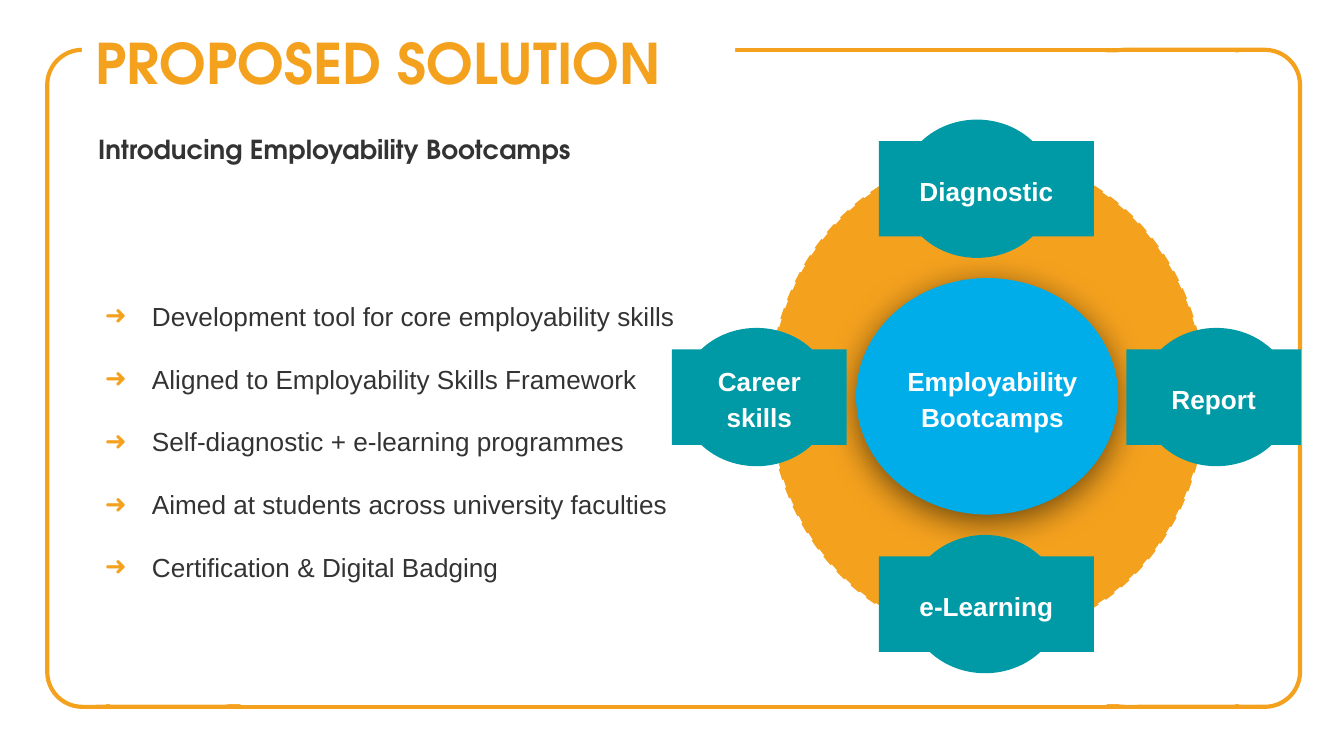
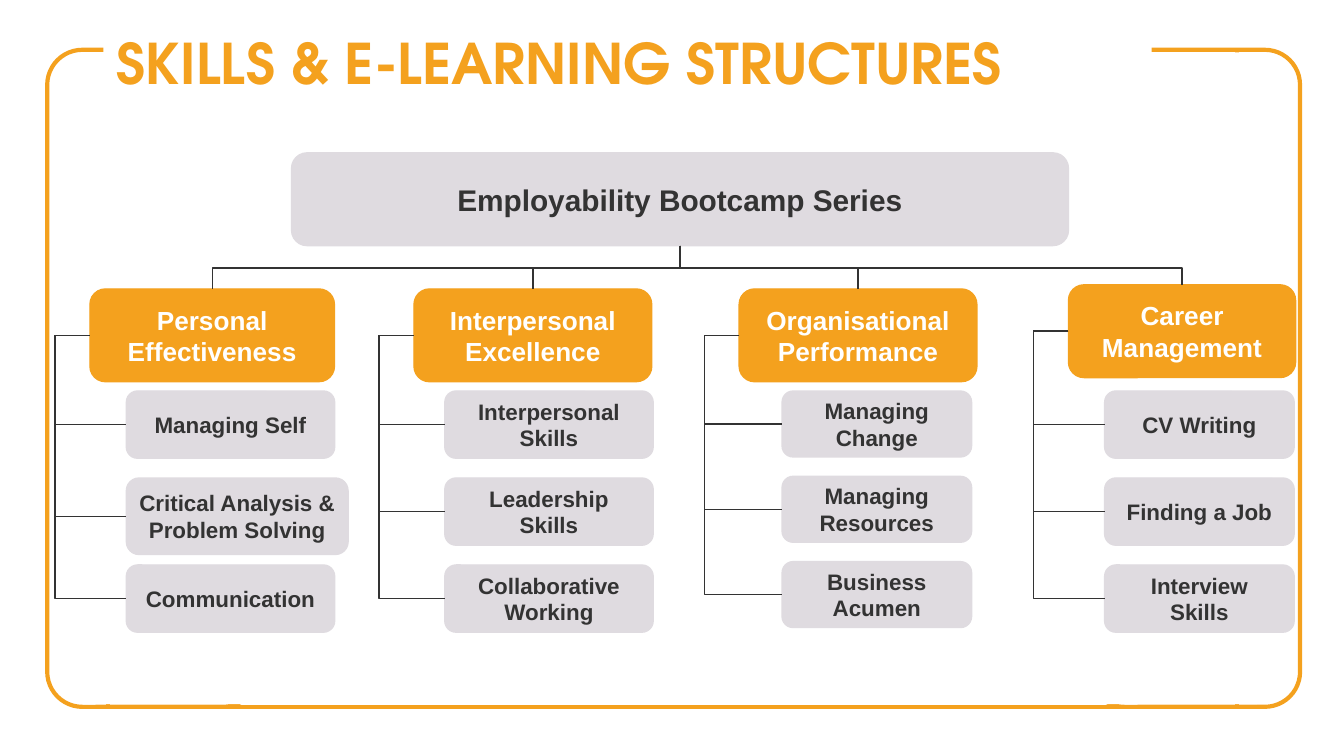
from lxml import etree
from pptx import Presentation
from pptx import util as u
from pptx.dml.color import RGBColor
from pptx.enum import dml, shapes, text
from pptx.oxml import ns

ORANGE, TEAL, BLUE = "F4A11E", "009AA6", "00ADE9"
GREY, INK, WHITE = "DFDBE0", "333333", "FFFFFF"
HEADING_FONT, TEXT_FONT = "TeX Gyre Adventor", "Arial"
SHAPE = shapes.MSO_SHAPE
CENTER = {"alignment": text.PP_ALIGN.CENTER}
LEFT = {"alignment": text.PP_ALIGN.LEFT, "space_before": u.Pt(0)}
MIDDLE, TOP = text.MSO_ANCHOR.MIDDLE, text.MSO_ANCHOR.TOP
INSET = 7.2
SPINE_GAP = 18.7
BAR_DROP = 12


def color(value):
    return RGBColor.from_string(value)


def points(box):
    return [u.Pt(round(value, 2)) for value in box]


def apply(target, values):
    for name, value in values.items():
        setattr(target, name, value)


def add_xml(parent, tag, **attributes):
    child = etree.SubElement(parent, ns.qn(tag))
    for name, value in attributes.items():
        child.set(name, str(value))
    return child


def add_block(page, kind, box, fill=None, line=None, weight=0.75):
    shape = page.shapes.add_shape(kind, *points(box))
    shape.shadow.inherit = False
    if fill:
        shape.fill.solid()
        shape.fill.fore_color.rgb = color(fill)
    else:
        shape.fill.background()
    if line:
        shape.line.color.rgb = color(line)
        shape.line.width = u.Pt(weight)
    else:
        shape.line.fill.background()
    return shape


def write(shape, lines, size, ink, bold=True, font=TEXT_FONT, anchor=MIDDLE, layout=CENTER, inset=INSET):
    frame = shape.text_frame
    margins = ("margin_left", "margin_top", "margin_right", "margin_bottom")
    apply(frame, {
        "word_wrap": True, "auto_size": text.MSO_AUTO_SIZE.NONE, "vertical_anchor": anchor,
        **dict.fromkeys(margins, u.Pt(inset)),
    })
    for number, line in enumerate(lines):
        para = frame.add_paragraph() if number else frame.paragraphs[0]
        apply(para, layout)
        span = para.add_run()
        span.text = line
        apply(span.font, {"name": font, "size": u.Pt(size), "bold": bold})
        span.font.color.rgb = color(ink)
    return frame.paragraphs


def place(holder, box):
    apply(holder, dict(zip(("left", "top", "width", "height"), points(box))))


def add_frame(deck, page, box):
    left, top, width, height = box
    side = 113
    panels = [
        (SHAPE.FLOWCHART_ALTERNATE_PROCESS, (left, top, side, height), WHITE, ORANGE),
        (SHAPE.FLOWCHART_ALTERNATE_PROCESS, (left + width - side, top, side, height), WHITE, ORANGE),
        (SHAPE.RECTANGLE, (left + 32.4, top, width - 66.2, height), None, ORANGE),
        (SHAPE.RECTANGLE, (left + 21.6, top + 1.4, width - 44.6, height - 2.8), WHITE, None),
    ]
    tree = deck.slide_master.shapes._spTree
    for number, (kind, panel_box, fill, line) in enumerate(panels):
        panel = add_block(page, kind, panel_box, fill, line, 2.25)
        panel._element.nvSpPr.cNvPr.id = 100 + number
        tree.insert(2 + number, panel._element)


def add_title(page, box, words):
    title = page.shapes.title
    place(title, box)
    title.fill.solid()
    title.fill.fore_color.rgb = color(WHITE)
    write(title, [words], 30, ORANGE, font=HEADING_FONT, anchor=TOP, layout=LEFT)


def add_subtitle(holder, box, words):
    place(holder, box)
    layout = {**LEFT, "space_after": u.Pt(16)}
    for para in write(holder, [words], 14, INK, font=HEADING_FONT, anchor=TOP, layout=layout):
        settings = para._p.get_or_add_pPr()
        settings.set("marL", "0")
        settings.set("indent", "0")
        add_xml(settings, "a:buNone")


def add_list(holder, box, lines):
    place(holder, box)
    layout = {**LEFT, "line_spacing": 2.0}
    for para in write(holder, lines, 14, INK, bold=False, anchor=TOP, layout=layout):
        settings = para._p.get_or_add_pPr()
        settings.set("marL", str(u.Pt(36)))
        settings.set("indent", str(u.Pt(-25.2)))
        add_xml(add_xml(settings, "a:buClr"), "a:srgbClr", val=ORANGE)
        add_xml(settings, "a:buChar", char="➜")


def add_label(page, box, fill, words):
    label = add_block(page, SHAPE.RECTANGLE, box, fill)
    write(label, [words], 14, WHITE, layout={**CENTER, "line_spacing": 1.15})


def add_hub(page, box):
    left, top, width, height = box
    hub = add_block(page, SHAPE.OVAL, box, BLUE)
    effects = hub._element.spPr.find(ns.qn("a:effectLst"))
    shadow = add_xml(effects, "a:outerShdw", blurRad=u.Pt(18), dist=u.Pt(4),
                     dir=5400000, algn="ctr", rotWithShape=0)
    add_xml(add_xml(shadow, "a:srgbClr", val="000000"), "a:alpha", val=55000)
    add_label(page, (left + 18, top + 34.6, width - 30.2, 57.6), BLUE, "Employability Bootcamps")


def add_node(page, box, oval_shift, words):
    left, top, width, height = box
    add_block(page, SHAPE.OVAL, (left + oval_shift, top - 11.5, 82, height + 23), TEAL)
    add_label(page, box, TEAL, words)


def add_wheel(page, box):
    left, top, width, height = box
    ring = add_block(page, SHAPE.OVAL, box, ORANGE, ORANGE, 1.5)
    ring.line.dash_style = dml.MSO_LINE.DASH
    add_hub(page, (left + 46, top + 65.5, 140.4, 126.7))
    nodes = [
        ("Diagnostic", 58.3, -7.9, 115.2, 11.5),
        ("e-Learning", 58.3, 214.6, 115.2, 15.8),
        ("Career skills", -52.6, 103.7, 93.6, 4.3),
        ("Report", 190.8, 103.7, 93.6, 7.2),
    ]
    for words, across, down, node_width, oval_shift in nodes:
        add_node(page, (left + across, top + down, node_width, 51.1), oval_shift, words)


def add_elbow(page, ends, bend, turn=0):
    line = page.shapes.add_connector(shapes.MSO_CONNECTOR.ELBOW, *points(ends))
    line.line.color.rgb = color(INK)
    line.line.width = u.Pt(0.75)
    settings = line._element.spPr
    if turn:
        settings.find(ns.qn("a:xfrm")).set("rot", str(turn * 60000))
    geometry = settings.find(ns.qn("a:prstGeom"))
    guides = geometry.find(ns.qn("a:avLst"))
    if guides is None:
        guides = add_xml(geometry, "a:avLst")
    add_xml(guides, "a:gd", name="adj1", fmla=f"val {round(bend * 100000)}")
    add_xml(settings, "a:effectLst")


def add_drop(page, start, end):
    run, rise = end[1] - start[1], abs(end[0] - start[0])
    left = (start[0] + end[0] - run) / 2
    top = (start[1] + end[1] - rise) / 2
    near, far, turn = (left, left + run, 90) if end[0] < start[0] else (left + run, left, 270)
    add_elbow(page, (near, top, far, top + rise), BAR_DROP / run, turn)


def add_card(page, box, words, size, fill=GREY, ink=INK, inset=INSET):
    card = add_block(page, SHAPE.ROUNDED_RECTANGLE, box, fill, fill)
    write(card, [words], size, ink, inset=inset)


def add_column(page, box, words, cards, card_box, step, larger):
    left, top, width, height = box
    add_card(page, box, words, 14, ORANGE, WHITE)
    card_left, card_top, card_width, card_height = card_box
    middle = top + height / 2
    indent = card_left - left
    for number, card in enumerate(cards):
        extra_width, extra_height, inset = larger.get(card, (0, 0, INSET))
        down = card_top + number * step
        full_height = card_height + extra_height
        add_card(page, (card_left, down, card_width + extra_width, full_height), card, 12, inset=inset)
        add_elbow(page, (left, middle, card_left, down + full_height / 2), -SPINE_GAP / indent)


def add_tree(page, box):
    left, top, width, height = box
    add_card(page, box, "Employability Bootcamp Series", 16)
    larger = {"Critical Analysis & Problem Solving": (7.2, 5, 1.5)}
    columns = [
        ("Personal Effectiveness", (48.2, 154.8, 131), (67.7, 111.6, 36), 46.6,
         ["Managing Self", "Critical Analysis & Problem Solving", "Communication"]),
        ("Interpersonal Excellence", (221.8, 154.8, 127.4), (238.3, 111.6, 36), 46.6,
         ["Interpersonal Skills", "Leadership Skills", "Collaborative Working"]),
        ("Organisational Performance", (396, 154.8, 127.4), (419, 101.5, 35.3), 45.7,
         ["Managing Change", "Managing Resources", "Business Acumen"]),
        ("Career Management", (572.4, 152.6, 121.7), (591.8, 101.5, 36), 46.6,
         ["CV Writing", "Finding a Job", "Interview Skills"]),
    ]
    start = (left + width / 2, top + height)
    for words, (across, down, head_width), (card_left, card_width, card_height), step, cards in columns:
        card_box = (card_left, top + 127.6, card_width, card_height)
        add_column(page, (across, down, head_width, height), words, cards, card_box, step, larger)
        add_drop(page, start, (across + head_width / 2, down))


def build_solution(deck):
    page = deck.slides.add_slide(deck.slide_layouts[3])
    add_frame(deck, page, (25.3, 26.7, 671.2, 352))
    add_title(page, (43.9, 7.9, 350, 67), "PROPOSED SOLUTION")
    add_list(page.placeholders[2], (38.2, 136.8, 334.8, 224), [
        "Development tool for core employability skills",
        "Aligned to Employability Skills Framework",
        "Self-diagnostic + e-learning programmes",
        "Aimed at students across university faculties",
        "Certification & Digital Badging",
    ])
    add_subtitle(page.placeholders[1], (45.4, 64.1, 319.7, 29.5), "Introducing Employability Bootcamps")
    add_wheel(page, (412.6, 83.5, 232.6, 257.8))


def build_structures(deck):
    page = deck.slides.add_slide(deck.slide_layouts[5])
    add_title(page, (55.4, 7.9, 561.6, 67), "SKILLS & E-LEARNING STRUCTURES")
    add_tree(page, (156.2, 81.9, 416.2, 49.7))


def main():
    deck = Presentation()
    deck.slide_width, deck.slide_height = u.Pt(720), u.Pt(405)
    build_solution(deck)
    build_structures(deck)
    deck.save("out.pptx")


if __name__ == "__main__":
    main()
